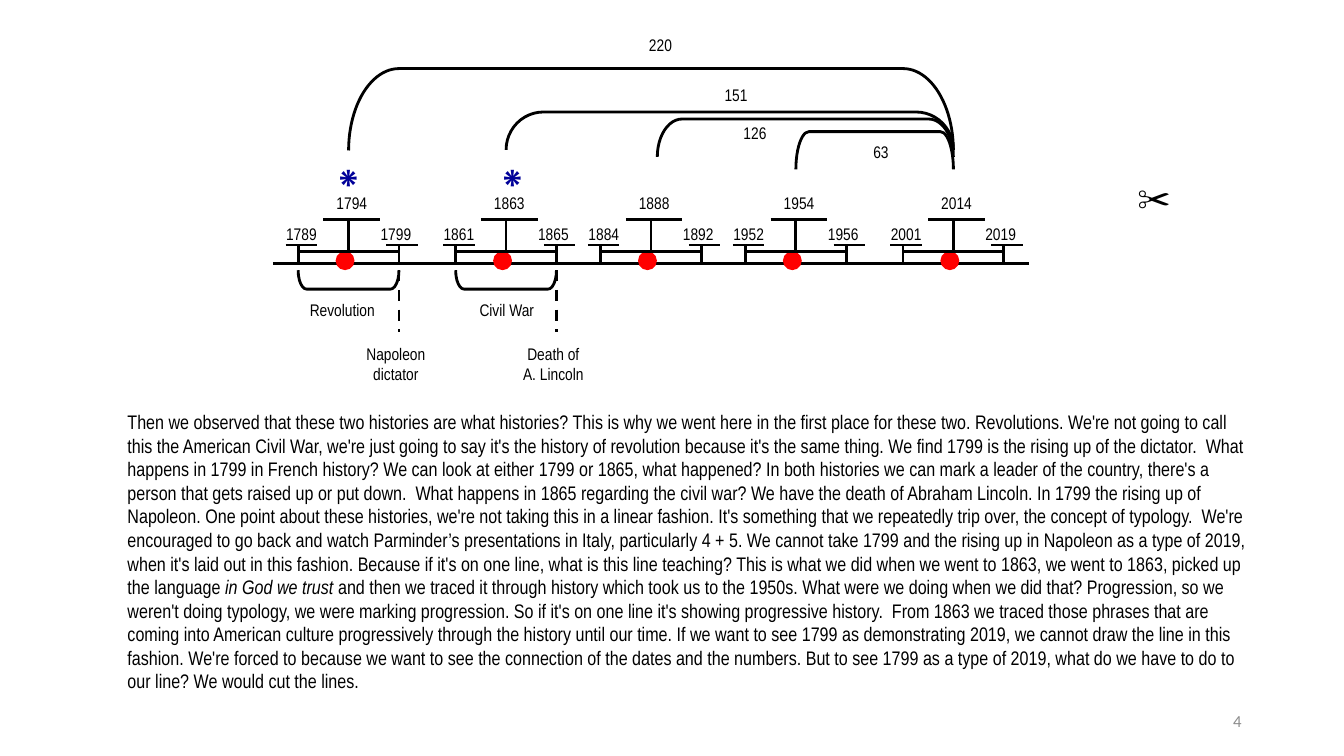
from pptx import Presentation
from pptx.dml.color import RGBColor
from pptx.enum.dml import MSO_LINE
from pptx.enum.shapes import MSO_CONNECTOR, MSO_SHAPE
from pptx.enum.text import MSO_ANCHOR, MSO_AUTO_SIZE, PP_ALIGN
from pptx.oxml.ns import qn
from pptx.util import Pt
from lxml import etree

LINE, DASH = MSO_CONNECTOR.STRAIGHT, MSO_LINE.DASH
OVAL, BRACKET = MSO_SHAPE.OVAL, MSO_SHAPE.LEFT_BRACKET
LEFT, MID, RIGHT = PP_ALIGN.LEFT, PP_ALIGN.CENTER, PP_ALIGN.RIGHT
TOP, CENTER = MSO_ANCHOR.TOP, MSO_ANCHOR.MIDDLE
GROW = MSO_AUTO_SIZE.SHAPE_TO_FIT_TEXT

COLORS = {"ink": "000000", "dot": "FF0000", "star": "000099", "page": "8C8C8C"}

# centre, middle year, first year, last year
SPANS = [
    (249, "1794", "1789", "1799"),
    (361.5, "1863", "1861", "1865"),
    (465, "1888", "1884", "1892"),
    (568.5, "1954", "1952", "1956"),
    (681, "2014", "2001", "2019"),
]
# start, top, height, bend, years, label left, label top
ARCS = [
    (249, 49, 58.5, 0.615, "220", 451.5, 21.5),
    (361.5, 80, 27, 0.986, "151", 505.5, 57.5),
    (469.5, 85, 27, 0.653, "126", 519, 85),
    (568.5, 94, 27, 0.347, "63", 609, 98.5),
]
# centre, star left, era, era left, era width, event
ERAS = [
    (249, 231, "Revolution", 213, 63, ["Napoleon", "dictator"]),
    (361.5, 348, "Civil War", 335, 54, ["Death of", "A. Lincoln"]),
]
# parts of the prose, joined by spaces
BEFORE = [
    "Then we observed that these two histories are what histories?",
    "This is why we went here in the first place for these two. Revolutions.",
    "We're not going to call this the American Civil War, we're just going to say",
    "it's the history of revolution because it's the same thing.",
    "We find 1799 is the rising up of the dictator. ",
    "What happens in 1799 in French history?",
    "We can look at either 1799 or 1865, what happened?",
    "In both histories we can mark a leader of the country,",
    "there's a person that gets raised up or put down. ",
    "What happens in 1865 regarding the civil war?",
    "We have the death of Abraham Lincoln. In 1799 the rising up of Napoleon.",
    "One point about these histories, we're not taking this in a linear fashion.",
    "It's something that we repeatedly trip over, the concept of typology. ",
    "We're encouraged to go back and watch Parminder’s presentations in Italy,",
    "particularly 4 + 5. We cannot take 1799 and the rising up in Napoleon",
    "as a type of 2019, when it's laid out in this fashion.",
    "Because if it's on one line, what is this line teaching?",
    "This is what we did when we went to 1863, we went to 1863,",
    "picked up the language ",
]
AFTER = [
    "and then we traced it through history which took us to the 1950s.",
    "What were we doing when we did that?",
    "Progression, so we weren't doing typology, we were marking progression.",
    "So if it's on one line it's showing progressive history. ",
    "From 1863 we traced those phrases that are coming into American culture",
    "progressively through the history until our time.",
    "If we want to see 1799 as demonstrating 2019,",
    "we cannot draw the line in this fashion. We're forced to because",
    "we want to see the connection of the dates and the numbers.",
    "But to see 1799 as a type of 2019, what do we have to do to our line?",
    "We would cut the lines.",
]
MOTTO = "in God we trust "

BASE, BAR, CAP, CROSS = 188.5, 157, 175, 179.5
HALF, DOT, YEAR = 36, 13.5, 40.5
LABEL = {"name": "Arial Narrow", "size": Pt(12)}
STAR = {"name": "Times New Roman", "size": Pt(26), "bold": True}
PROSE = {"name": "Arial Narrow", "size": Pt(14)}
CUT = {"name": "Arial", "size": Pt(24)}
PAGE = {"name": "Calibri", "size": Pt(12)}

deck = Presentation()
deck.slide_width, deck.slide_height = Pt(960), Pt(540)
slide = deck.slides.add_slide(deck.slide_layouts[6])
shapes = slide.shapes


def tint(name):
    return RGBColor.from_string(COLORS[name])


def stroke(x1, y1, x2, y2, dash=None):
    line = shapes.add_connector(LINE, Pt(x1), Pt(y1), Pt(x2), Pt(y2))
    line.line.color.rgb = tint("ink")
    line.line.width = Pt(2)
    if dash is not None:
        line.line.dash_style = dash
    etree.SubElement(line._element.spPr, qn("a:effectLst"))


def bracket(x, y, wide, high, turn, bend):
    """Draw a turned bracket; x, y, wide and high are its extent as seen."""
    mark = shapes.add_shape(BRACKET, Pt(x + (wide - high) / 2), Pt(y + (high - wide) / 2),
                            Pt(high), Pt(wide))
    mark.rotation = turn
    mark.adjustments[0] = bend
    mark.shadow.inherit = False
    mark.fill.background()
    mark.line.color.rgb = tint("ink")
    mark.line.width = Pt(2)


def write(x, y, wide, high, paras, form=LABEL, color="ink", align=MID, pad=(3, 3), anchor=TOP):
    """Add a text box; each paragraph is a list of (text, italic) runs or a string."""
    box = shapes.add_textbox(Pt(x), Pt(y), Pt(wide), Pt(high))
    frame = box.text_frame
    frame.word_wrap = True
    frame.vertical_anchor = anchor
    frame.margin_left = frame.margin_right = Pt(pad[0])
    frame.margin_top = frame.margin_bottom = Pt(pad[1])
    for i, runs in enumerate(paras):
        para = frame.add_paragraph() if i else frame.paragraphs[0]
        para.alignment = align
        for text, slant in [(runs, False)] if isinstance(runs, str) else runs:
            run = para.add_run()
            run.text = text
            run.font.italic = slant
            run.font.color.rgb = tint(color)
            for key, value in form.items():
                setattr(run.font, key, value)
    return frame


write(678, 500.5, 216, 29, ["4"], PAGE, "page", RIGHT, (7.2, 3.6), CENTER)
body = [(" ".join(BEFORE), False), (MOTTO, True), (" ".join(AFTER), False)]
prose = write(84, 289.5, 816.5, 211, [body], PROSE, align=LEFT, pad=(7.2, 3.6))
prose.auto_size = GROW

stroke(195, BASE, 735, BASE)
for mid, year, first, last in SPANS:
    stroke(mid, BAR, mid, BASE)
    stroke(mid - 18, BAR, mid + 22.5, BAR)
    for side, cap in ((-HALF, -45), (HALF, 27)):
        stroke(mid + side, CAP, mid + side, BASE)
        stroke(mid + cap, CAP, mid + cap + 22.5, CAP)
    write(mid - 18, 134.5, YEAR, 22.5, [year])
    write(mid - 54, BAR, YEAR, 18, [first])
    write(mid + 13.5, BAR, YEAR, 18, [last])
    dot = shapes.add_shape(OVAL, Pt(mid - 9.25), Pt(CROSS), Pt(DOT), Pt(DOT))
    dot.shadow.inherit = False
    dot.fill.solid()
    dot.fill.fore_color.rgb = tint("dot")
    dot.line.fill.background()
    stroke(mid - HALF, CROSS, mid + HALF, CROSS)

now = SPANS[-1][0]
for start, top, high, bend, years, left, head in ARCS:
    bracket(start, top, now - start, high, 90, bend)
    write(left, head, YEAR, 22.5, [years])

for mid, star, era, left, wide, event in ERAS:
    write(star, 107.5, 36, 27, ["⁕"], STAR, "star")
    bracket(mid - HALF, 193, 2 * HALF, 13.5, 270, 0.444)
    write(left, 211, wide, 22.5, [era])
    stroke(mid + HALF, 193, mid + HALF, 237.5, DASH)
    write(mid + 4.5, 242.5, 58.5, 36, event)

write(809.5, 124, 49.5, 40.5, ["✂"], CUT, align=LEFT)
deck.save("out.pptx")
